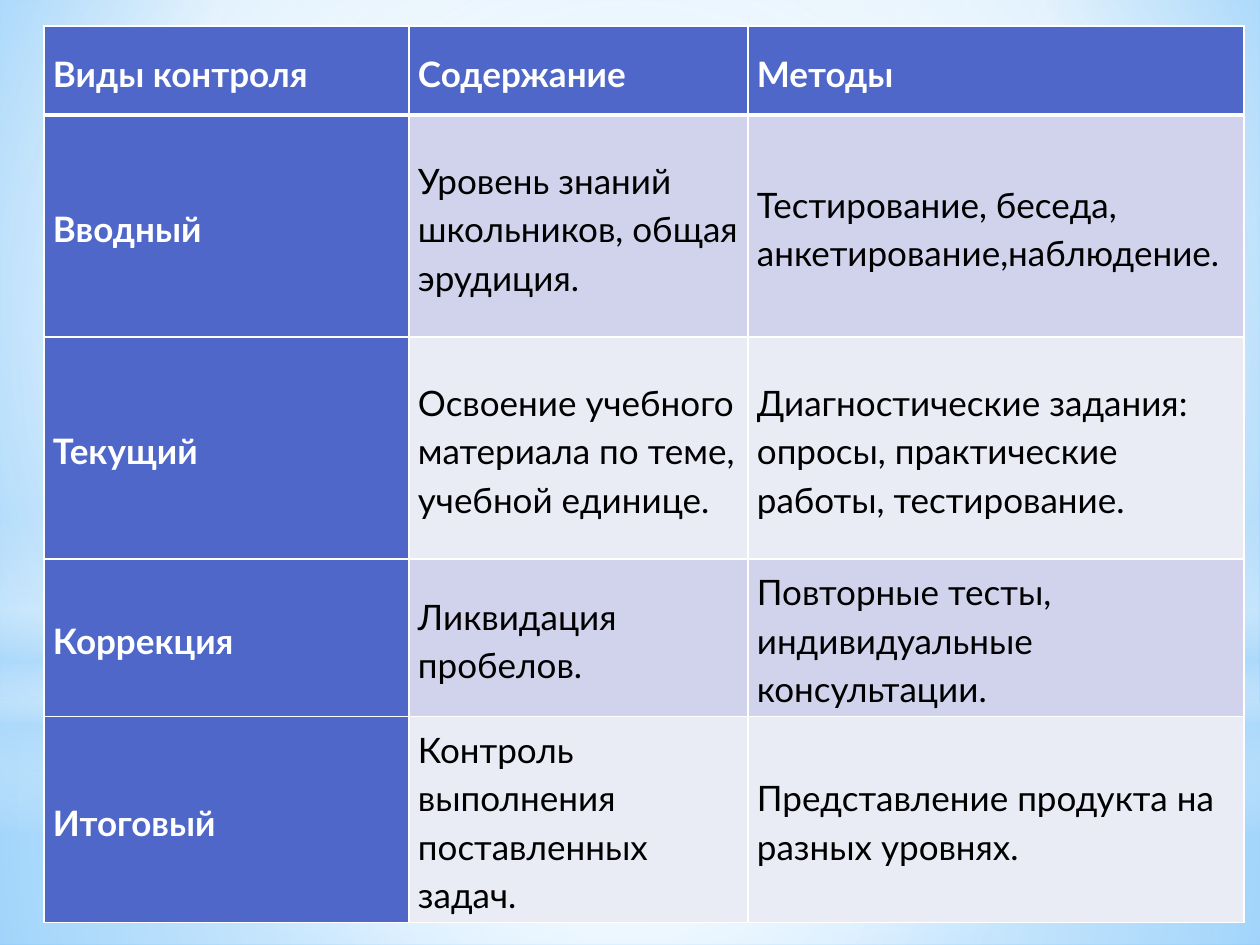
from dataclasses import dataclass
from lxml import etree
from pptx import Presentation
from pptx import util as u
from pptx.dml.color import RGBColor
from pptx.enum import shapes, text
from pptx.oxml import ns


@dataclass(frozen=True)
class Theme:
    font: str = "Lato"
    size: int = 20
    white: str = "FFFFFF"
    black: str = "000000"
    sky: str = "B4DCFA"
    head: str = "4E67C8"
    bands: tuple = ("D0D3EB", "E9EBF5")
    thin: int = 1
    thick: int = 3


T = Theme()
WIDE, HIGH = 1260, 945
MID = (50, 50, 50, 50)
COLS = (365, 339, 496)
ROWS = (89, 222, 222, 155, 155)
DATA = (
    ("Виды контроля", "Содержание", "Методы"),
    ("Вводный", "Уровень знаний школьников, общая эрудиция.",
     "Тестирование, беседа, анкетирование,наблюдение."),
    ("Текущий", "Освоение учебного материала по теме, учебной единице.",
     "Диагностические задания: опросы, практические работы, тестирование."),
    ("Коррекция", "Ликвидация пробелов.",
     "Повторные тесты, индивидуальные консультации."),
    ("Итоговый", "Контроль выполнения поставленных задач.",
     "Представление продукта на разных уровнях."),
)
PARA = {"line_spacing": 1.15, "space_before": u.Pt(12), "space_after": u.Pt(12)}


def px(num):
    return u.Emu(round(num * 914400 / 126))


def put(obj, vals):
    for key, val in vals.items():
        setattr(obj, key, val)


def node(top, tag, **vals):
    return etree.SubElement(top, ns.qn("a:" + tag), {k: str(v) for k, v in vals.items()})


def blend(fill, root, stops, focus=None):
    fill.gradient()
    grad = root.find(".//" + ns.qn("a:gradFill"))
    for kid in list(grad):
        grad.remove(kid)
    group = node(grad, "gsLst")
    for pos, tone, alpha in stops:
        color = node(node(group, "gs", pos=pos * 1000), "srgbClr", val=tone)
        if alpha < 100:
            node(color, "alpha", val=alpha * 1000)
    if focus:
        way = node(grad, "path", path="circle")
        node(way, "fillToRect", **{k: v * 1000 for k, v in zip("ltrb", focus)})
    else:
        node(grad, "lin", ang=5400000, scaled=0)


def glow(slide, kind, box, stops, focus=MID):
    shape = slide.shapes.add_shape(kind, *map(px, box))
    shape.shadow.inherit = False
    shape.line.fill.background()
    blend(shape.fill, shape.element, stops, focus)


def sky(slide, box):
    left, top, wide, high = box
    rect, oval = shapes.MSO_SHAPE.RECTANGLE, shapes.MSO_SHAPE.OVAL
    blend(slide.background.fill, slide.element,
          [(0, "9ED5FF", 100), (60, T.white, 100), (100, "5BB9FF", 100)], (20, 10, 20, 60))
    cut = 703
    glow(slide, rect, (left, top + cut, wide, high - cut),
         [(0, T.white, 91), (37, T.white, 76), (100, T.sky, 79)])
    glow(slide, rect, (left, top, wide, cut),
         [(0, T.white, 89), (48, T.white, 62), (100, T.sky, 79)])
    glow(slide, rect, (left, top + 519, wide, 315),
         [(0, T.white, 0), (29, T.white, 30), (45, T.sky, 40),
          (55, T.white, 26), (65, T.sky, 60), (100, T.white, 0)], None)
    glow(slide, oval, (left, top + 221, wide, cut),
         [(0, T.white, 100), (56, T.white, 0)])


def edge(cell, row):
    props = cell._tc.get_or_add_tcPr()
    bold = {0: "B", 1: "T"}.get(row)
    for spot, side in enumerate("LRTB"):
        size = T.thick if side == bold else T.thin
        line = node(props, "ln" + side, w=u.Pt(size))
        node(node(line, "solidFill"), "srgbClr", val=T.white)
        props.insert(spot, line)


def fit(cell, row, col, words):
    key = row == 0 or col == 0
    put(cell, {"margin_left": px(9), "margin_right": px(9), "margin_top": px(6),
               "margin_bottom": px(6), "vertical_anchor": text.MSO_ANCHOR.MIDDLE})
    cell.fill.solid()
    cell.fill.fore_color.rgb = RGBColor.from_string(T.head if key else T.bands[(row - 1) % 2])
    edge(cell, row)
    para = cell.text_frame.paragraphs[0]
    put(para, PARA)
    run = para.add_run()
    run.text = words
    put(run.font, {"name": T.font, "size": u.Pt(T.size), "bold": key})
    run.font.color.rgb = RGBColor.from_string(T.white if key else T.black)


def grid(slide, box):
    table = slide.shapes.add_table(len(ROWS), len(COLS), *map(px, box)).table
    put(table, {"first_row": False, "horz_banding": False})
    for col, wide in zip(table.columns, COLS):
        col.width = px(wide)
    for row, high in zip(table.rows, ROWS):
        row.height = px(high)
    for r, line in enumerate(DATA):
        for c, words in enumerate(line):
            fit(table.cell(r, c), r, c, words)


def main():
    deck = Presentation()
    put(deck, {"slide_width": px(WIDE), "slide_height": px(HIGH)})
    slide = deck.slides.add_slide(deck.slide_layouts[6])
    sky(slide, (0, 0, WIDE, HIGH))
    grid(slide, (44, 26, sum(COLS), sum(ROWS)))
    deck.save("out.pptx")


if __name__ == "__main__":
    main()
